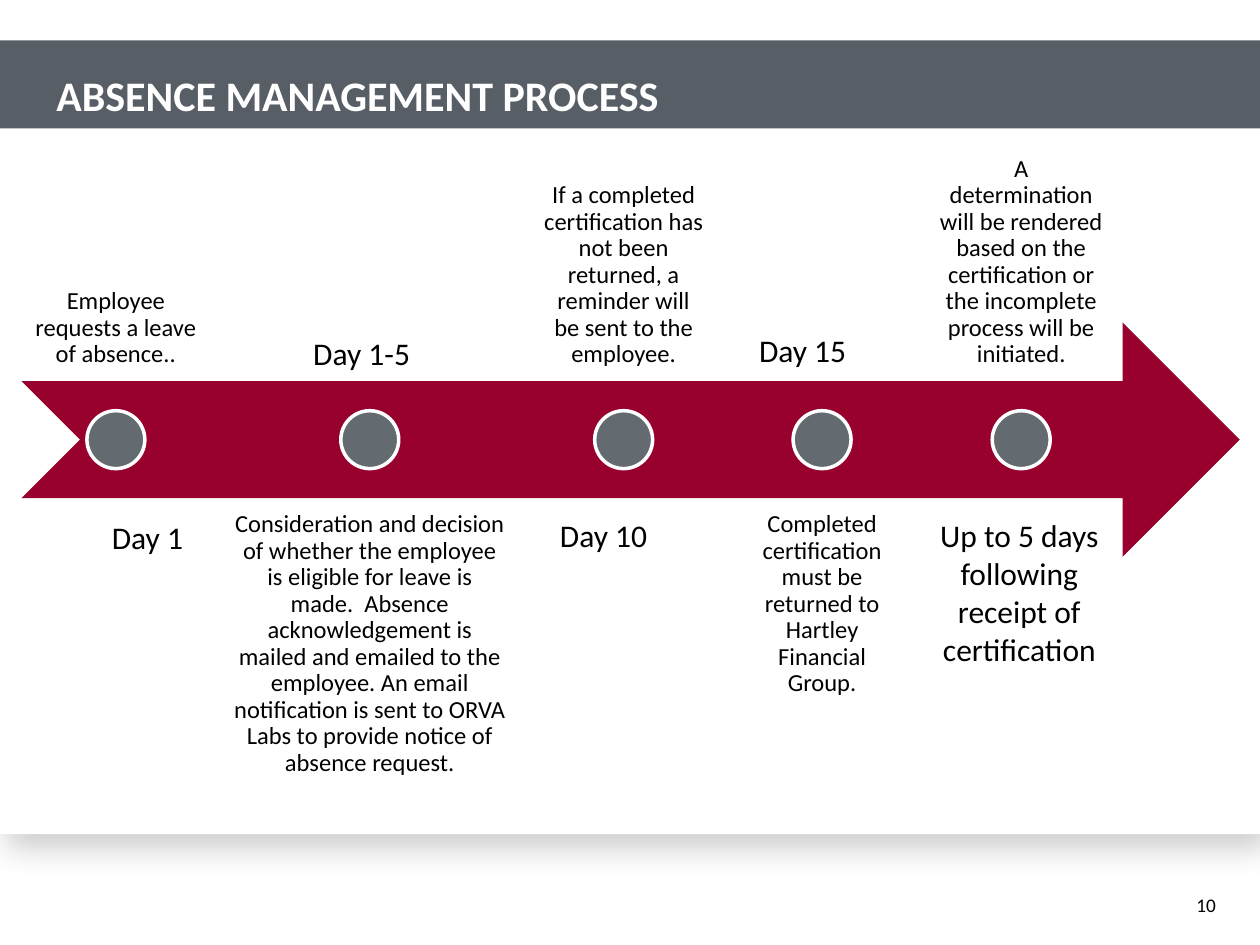
from lxml import etree
from pptx import Presentation
from pptx.dml.color import RGBColor
from pptx.enum.shapes import MSO_SHAPE
from pptx.enum.text import MSO_ANCHOR, PP_ALIGN
from pptx.oxml.ns import qn
from pptx.util import Inches, Pt

RECTANGLE, OVAL = MSO_SHAPE.RECTANGLE, MSO_SHAPE.OVAL
NOTCHED_ARROW = MSO_SHAPE.NOTCHED_RIGHT_ARROW
TOP, BOTTOM = MSO_ANCHOR.TOP, MSO_ANCHOR.BOTTOM
LEFT, CENTER, RIGHT = PP_ALIGN.LEFT, PP_ALIGN.CENTER, PP_ALIGN.RIGHT

WHITE = RGBColor(0xFF, 0xFF, 0xFF)
BLACK = RGBColor(0x00, 0x00, 0x00)
SLATE = RGBColor(0x57, 0x5E, 0x66)
CRIMSON = RGBColor(0x98, 0x00, 0x2E)
GRAY = RGBColor(0x63, 0x6B, 0x70)

prs = Presentation()
prs.slide_width, prs.slide_height = Inches(10), Inches(7.5)
slide = prs.slides.add_slide(prs.slide_layouts[6])
COL = prs.slide_width / 100
ROW = prs.slide_height / 75


def add_figure(kind, left, top, width, height, fill):
    figure = slide.shapes.add_shape(
        kind, int(left * COL), int(top * ROW), int(width * COL), int(height * ROW))
    figure.shadow.inherit = False
    figure.fill.solid()
    figure.fill.fore_color.rgb = fill
    figure.line.fill.background()
    return figure


def add_words(words, left, top, width, height, size, anchor=TOP, align=CENTER,
              color=BLACK, insets=(1, 0.5, 1, 0.5)):
    frame = slide.shapes.add_textbox(
        int(left * COL), int(top * ROW), int(width * COL), int(height * ROW)).text_frame
    frame.word_wrap = True
    frame.vertical_anchor = anchor
    frame.margin_left, frame.margin_top, frame.margin_right, frame.margin_bottom = (
        int(inset * COL) for inset in insets)
    paragraph = frame.paragraphs[0]
    paragraph.text = words
    paragraph.alignment = align
    paragraph.font.name = "Calibri"
    paragraph.font.size = Pt(size)
    paragraph.font.color.rgb = color
    return paragraph


panel = add_figure(RECTANGLE, 0, 10.2, 100, 56, WHITE)
effects = panel._element.spPr.find(qn("a:effectLst"))
shadow = etree.SubElement(effects, qn("a:outerShdw"), blurRad=str(Pt(17.5)),
                          dist=str(Pt(9)), dir=str(60 * 60000), rotWithShape="0")
shade = etree.SubElement(shadow, qn("a:srgbClr"), val="808080")
etree.SubElement(shade, qn("a:alpha"), val="40000")

add_figure(RECTANGLE, 0, 3.2, 100, 7, SLATE)
add_words("10", 91.5, 70.7, 5, 2, 11, BOTTOM, RIGHT, insets=(1, 0, 0, 0))
title = add_words("ABSENCE MANAGEMENT PROCESS", 3.5, 5, 93, 5, 24, BOTTOM, LEFT, WHITE)
title.font.bold = True
title.line_spacing = Pt(24)

MARGIN, GAP, DOT = 1.7, 0.75, 4.6
ARROW_TOP, BAND = 25.6, 18.6
ABOVE, BELOW = 11.7, 39.5
add_figure(NOTCHED_ARROW, MARGIN, ARROW_TOP, 96.7, BAND, CRIMSON)

steps = [
    (15, ABOVE, "Employee requests a leave of absence..",
     "Day 1", 6.3, 40.6, 10.8),
    (23.8, BELOW, "Consideration and decision of whether the employee is eligible for "
     "leave is made.  Absence acknowledgement is mailed and emailed to the employee. "
     "An email notification is sent to ORVA Labs to provide notice of absence request.",
     "Day 1-5", 23.3, 26, 10.8),
    (15, ABOVE, "If a completed certification has not been returned, a reminder will "
     "be sent to the employee.",
     "Day 10", 42.5, 40.5, 10.8),
    (15, BELOW, "Completed certification must be returned to Hartley Financial Group.",
     "Day 15", 58.3, 25.8, 10.8),
    (15.1, ABOVE, "A determination will be rendered based on the certification or the "
     "incomplete process will be initiated.",
     "Up to 5 days following receipt of certification", 73.5, 40.5, 14.8),
]

step_left = MARGIN
for step_width, step_top, action, day, day_left, day_top, day_width in steps:
    anchor = BOTTOM if step_top == ABOVE else TOP
    description = add_words(action, step_left, step_top, step_width, BAND, 14, anchor,
                            insets=(1.1, 1.1, 1.1, 1.1))
    description.line_spacing = 0.9
    dot = add_figure(OVAL, step_left + (step_width - DOT) / 2,
                     ARROW_TOP + (BAND - DOT) / 2, DOT, DOT, GRAY)
    dot.line.color.rgb = WHITE
    dot.line.width = Pt(2)
    add_words(day, day_left, day_top, day_width, 4, 18)
    step_left += step_width + GAP

prs.save("out.pptx")
